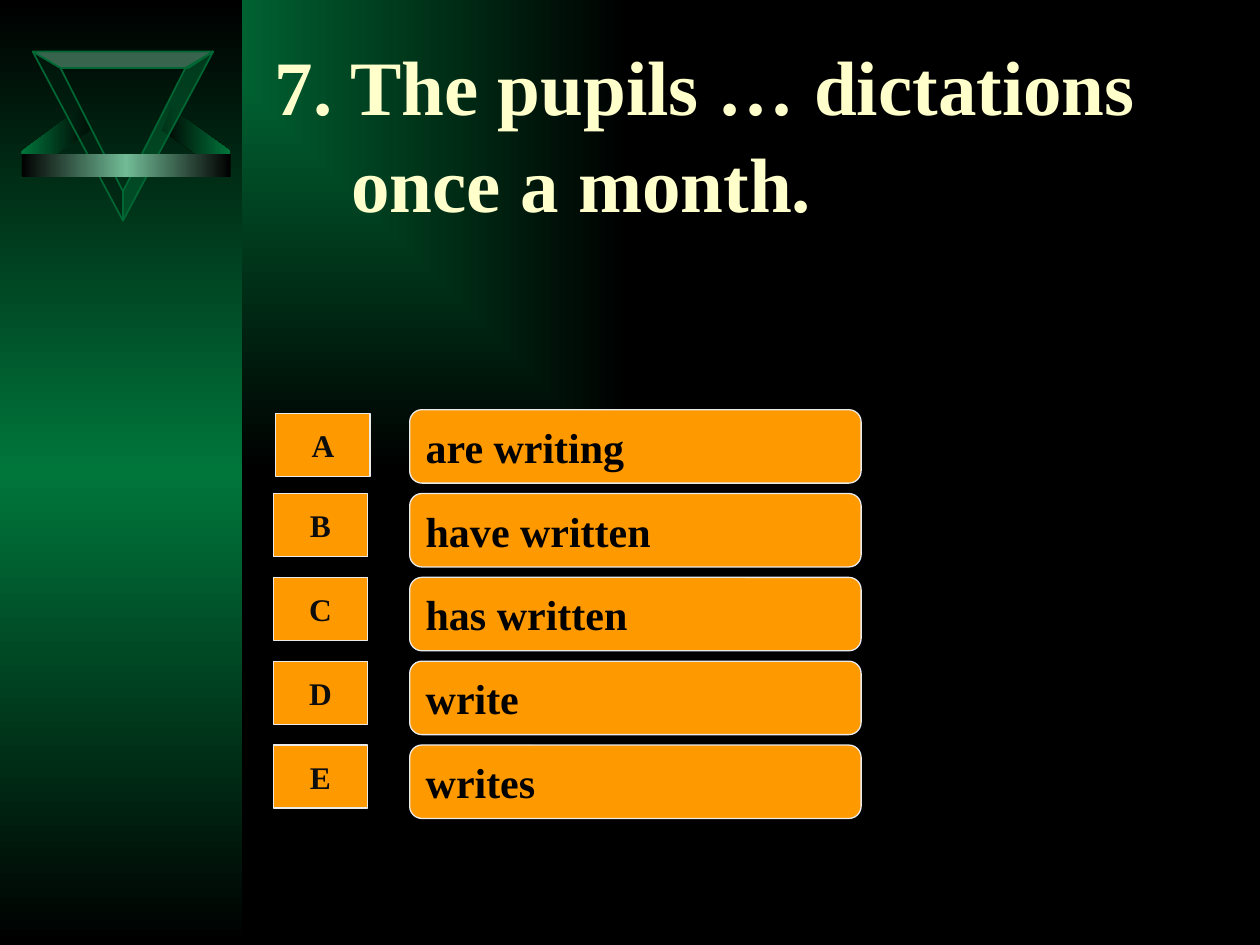
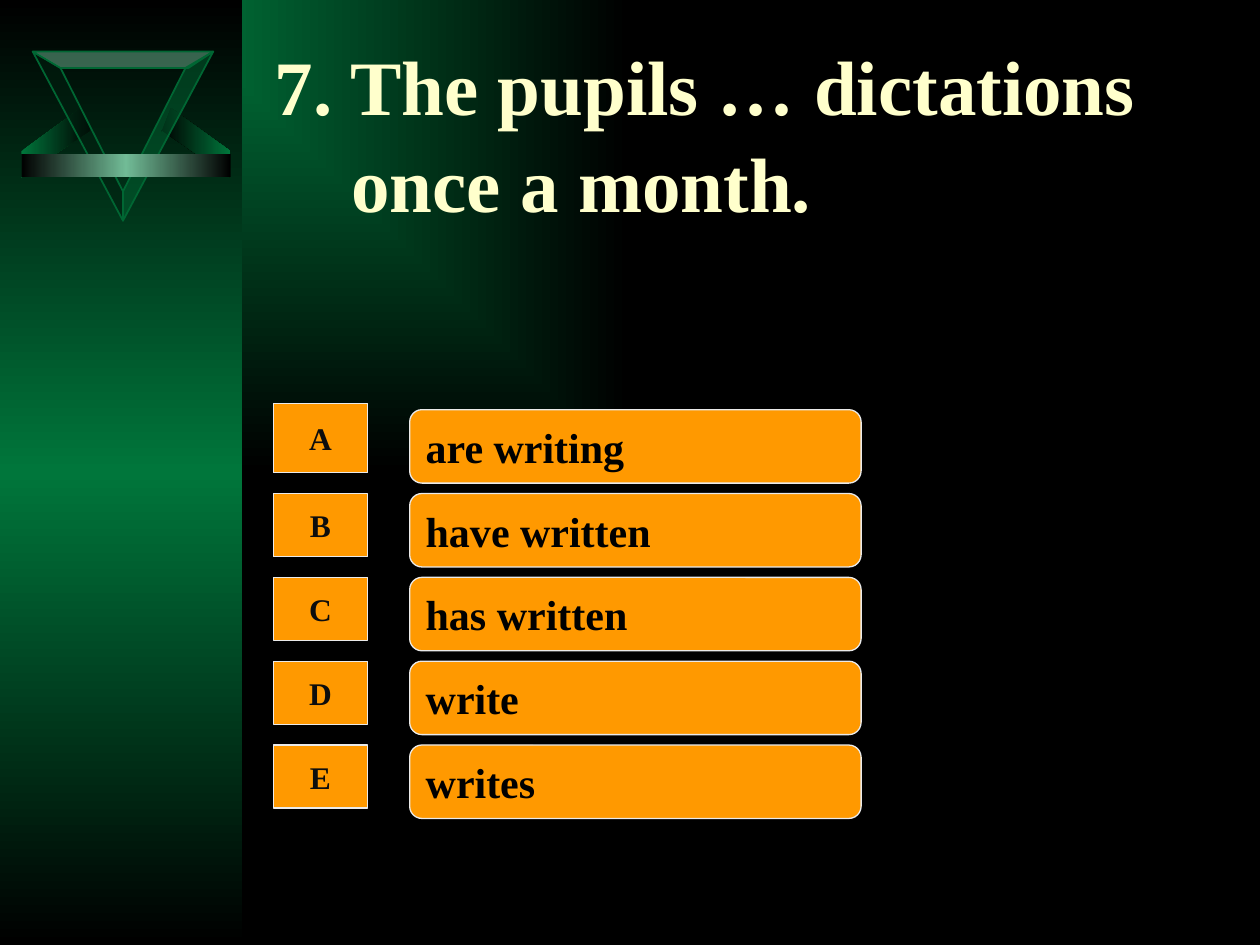
from dataclasses import dataclass

from lxml.etree import SubElement
from pptx import Presentation
from pptx.dml.color import RGBColor
from pptx.enum.shapes import MSO_SHAPE as Preset
from pptx.enum.text import MSO_ANCHOR as Anchor, MSO_AUTO_SIZE as AutoSize, PP_ALIGN as Align
from pptx.oxml.ns import qn
from pptx.util import Cm, Pt


@dataclass(frozen=True)
class Theme:
    font: str = "Times New Roman"
    title_size: int = 44
    answer_size: int = 24
    letter_size: int = 18
    black: str = "000000"
    green: str = "00763B"
    dark_green: str = "002010"
    edge_green: str = "006633"
    pale_green: str = "71BB96"
    cream: str = "FFFFCC"
    orange: str = "FF9900"
    outline: str = "EAEAEA"
    letter: str = "0D0D0D"


THEME = Theme()
TITLE = "7. The pupils … dictations\vonce a month."
ANSWERS = ("are writing", "have written", "has written", "write", "writes")
LETTERS = "ABCDE"
ROW_TOP, ROW_STEP = 8.26, 1.69
BUTTON_LEFT, BUTTON_WIDTH, BUTTON_HEIGHT = 5.51, 1.9, 1.27
FIRST_BUTTONS = (
    (5.56, 8.33, BUTTON_WIDTH, BUTTON_HEIGHT),
    (BUTTON_LEFT, 8.13, BUTTON_WIDTH, 1.4),
)
WING = ((0.43, 3.05), (0.43, 3.58), (1.83, 2.62), (1.83, 2.67), (1.63, 2.18))
WING_AXIS = 2.54
SIDE = ((2.48, 4.45), (2.48, 3.86), (1.22, 1.37), (0.66, 1.04))
SIDE_AXIS = 2.48
LID = ((0.66, 1.04), (1.22, 1.37), (3.8, 1.37), (4.3, 1.04))


def mirror(points, axis):
    return [(2 * axis - x, y) for x, y in points]


def paint_gradient(owner, fill, colours, angle=0, from_corner=False):
    """Fill with evenly spaced stops, in a line or out from the top left corner."""
    fill.gradient()
    gradient = owner.element.find(".//" + qn("a:gradFill"))
    for child in list(gradient):
        gradient.remove(child)
    stops = SubElement(gradient, qn("a:gsLst"))
    for index, colour in enumerate(colours):
        position = 100000 * index // (len(colours) - 1)
        stop = SubElement(stops, qn("a:gs"), pos=str(position))
        SubElement(stop, qn("a:srgbClr"), val=colour)
    if from_corner:
        path = SubElement(gradient, qn("a:path"))
        path.set("path", "rect")
        SubElement(path, qn("a:fillToRect"), r="100000", b="100000")
    else:
        SubElement(gradient, qn("a:lin"), ang=str(angle * 60000), scaled="1")


def write_text(shape, text, size, colour, align=Align.LEFT, hanging=0, spacing=None):
    """Write one bold paragraph, centred from top to bottom."""
    frame = shape.text_frame
    frame.auto_size = AutoSize.NONE
    frame.word_wrap = True
    frame.vertical_anchor = Anchor.MIDDLE
    frame.text = text
    paragraph = frame.paragraphs[0]
    paragraph.alignment = align
    if hanging:
        properties = paragraph._p.get_or_add_pPr()
        properties.set("marL", str(Cm(hanging)))
        properties.set("indent", str(-Cm(hanging)))
    if spacing:
        paragraph.line_spacing = spacing
    for run in paragraph.runs:
        run.font.name = THEME.font
        run.font.size = Pt(size)
        run.font.bold = True
        run.font.color.rgb = RGBColor.from_string(colour)


class QuizDeck:
    def __init__(self, theme):
        self.theme = theme
        self.presentation = Presentation()
        self.presentation.slide_width = Cm(25.4)
        self.presentation.slide_height = Cm(19.05)
        master = self.presentation.slide_master
        paint_gradient(master, master.background.fill, (theme.green, theme.black),
                       from_corner=True)
        self.slide = None

    def new_slide(self):
        layout = self.presentation.slide_layouts.get_by_name("Title Only")
        self.slide = self.presentation.slides.add_slide(layout)
        self.band(0, 0, 4.88, 19.05, self.theme.green, angle=90)
        self.emblem()

    def finish(self, shape, fill=None, line=None, width=0.75, opacity=None):
        """Set a solid fill and an outline, and drop the shadow."""
        shape.shadow.inherit = False
        if fill:
            shape.fill.solid()
            shape.fill.fore_color.rgb = RGBColor.from_string(fill)
        if opacity:
            colour = shape.element.find(".//" + qn("a:srgbClr"))
            SubElement(colour, qn("a:alpha"), val=str(opacity * 1000))
        if line:
            shape.line.color.rgb = RGBColor.from_string(line)
            shape.line.width = Pt(width)
        else:
            shape.line.fill.background()

    def preset(self, kind, *box):
        return self.slide.shapes.add_shape(kind, *map(Cm, box))

    def band(self, left, top, width, height, middle, angle=0):
        shape = self.preset(Preset.RECTANGLE, left, top, width, height)
        self.finish(shape)
        paint_gradient(shape, shape.fill, (self.theme.black, middle, self.theme.black), angle)

    def outline(self, points):
        start, *rest = [(Cm(x), Cm(y)) for x, y in points]
        builder = self.slide.shapes.build_freeform(*start)
        builder.add_line_segments(rest, close=True)
        return builder.convert_to_shape()

    def emblem(self):
        theme = self.theme
        for points, colours in (
            (mirror(WING, WING_AXIS), (theme.black, theme.green)),
            (WING, (theme.green, theme.black)),
        ):
            wing = self.outline(points)
            self.finish(wing)
            paint_gradient(wing, wing.fill, colours)
        for points, fill in (
            (SIDE, theme.dark_green),
            (LID, theme.pale_green),
            (mirror(SIDE, SIDE_AXIS), theme.edge_green),
        ):
            self.finish(self.outline(points), fill, theme.edge_green, width=1, opacity=50)
        self.band(0.43, 3.1, 4.22, 0.48, theme.pale_green)

    def title(self, text):
        title = self.slide.shapes.title
        title.left, title.top, title.width, title.height = map(Cm, (5.28, 0.64, 19.69, 4.01))
        write_text(title, text, self.theme.title_size, self.theme.cream,
                   hanging=1.55, spacing=1.05)

    def answer(self, text, top):
        shape = self.preset(Preset.ROUNDED_RECTANGLE, 8.26, top, 9.1, 1.48)
        self.finish(shape, self.theme.orange, self.theme.outline)
        write_text(shape, text, self.theme.answer_size, self.theme.black)

    def button(self, letter, box):
        shape = self.preset(Preset.ACTION_BUTTON_CUSTOM, *box)
        self.finish(shape, self.theme.orange, self.theme.outline)
        write_text(shape, letter, self.theme.letter_size, self.theme.letter, Align.CENTER)


def main():
    deck = QuizDeck(THEME)
    for first_button in FIRST_BUTTONS:
        deck.new_slide()
        deck.title(TITLE)
        for row, (letter, answer) in enumerate(zip(LETTERS, ANSWERS)):
            top = ROW_TOP + row * ROW_STEP
            deck.answer(answer, top)
            usual_box = (BUTTON_LEFT, top, BUTTON_WIDTH, BUTTON_HEIGHT)
            deck.button(letter, usual_box if row else first_button)
    deck.presentation.save("out.pptx")


if __name__ == "__main__":
    main()
